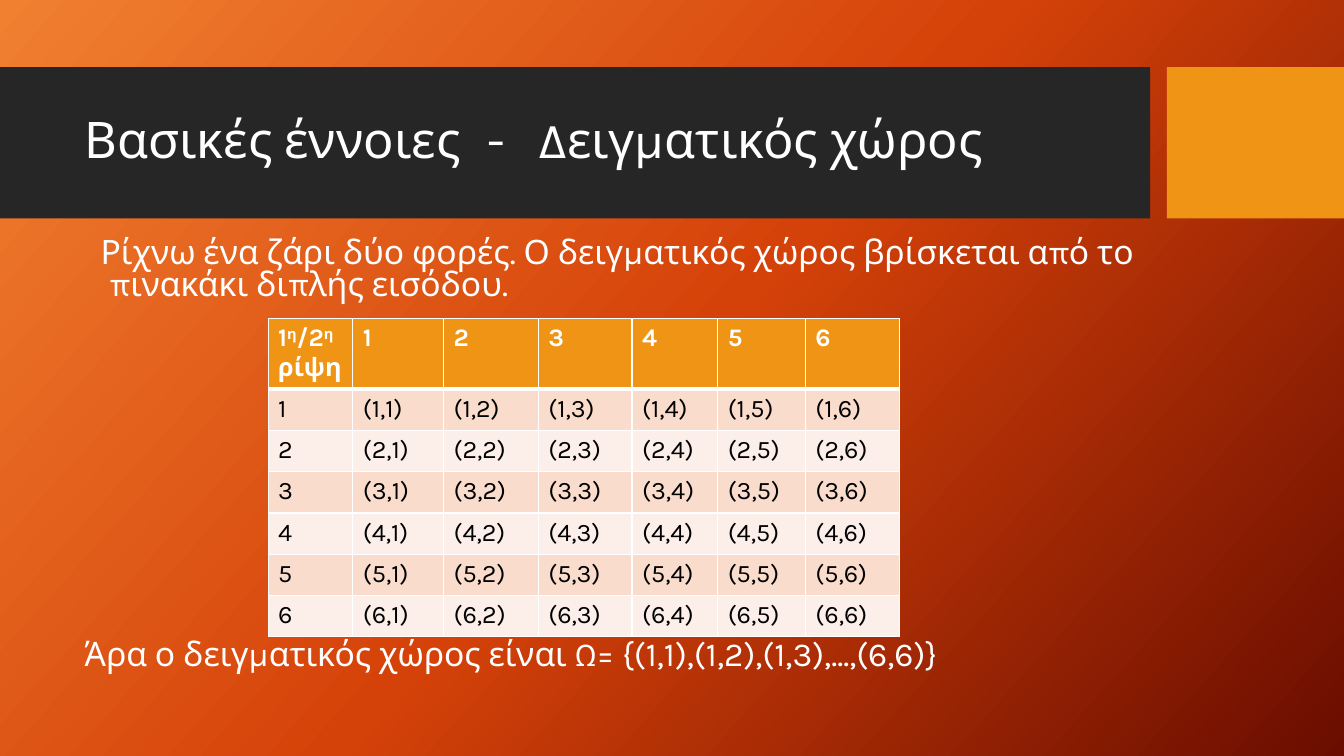
from copy import deepcopy

from lxml import etree
from pptx import Presentation
from pptx.dml.color import RGBColor
from pptx.enum.shapes import MSO_SHAPE
from pptx.enum.text import MSO_ANCHOR
from pptx.oxml.ns import qn
from pptx.util import Pt

RECTANGLE = MSO_SHAPE.RECTANGLE
MIDDLE = MSO_ANCHOR.MIDDLE
FONT = "Karla"
COLORS = {
    "white": "FFFFFF",
    "black": "000000",
    "band": "262626",
    "accent": "F09415",
    "odd_row": "F9DCCC",
    "even_row": "FCEEE8",
}
BACKGROUND_STOPS = [(0, "F18031"), (0.5, "D54209"), (1, "6A0D00")]
COLUMN_WIDTHS = [60.5, 64.8, 67.7, 67, 61.2, 62.6, 67]
HEADER_HEIGHT = 48.5
ROW_HEIGHT = 29.5
FACES = range(1, 7)


def rgb(name):
    return RGBColor.from_string(COLORS[name])


def style(paragraph, size, color="white", bold=False):
    font = paragraph.font
    font.name = FONT
    font.size = Pt(size)
    font.bold = bold
    font.color.rgb = rgb(color)


def paint_background(slide):
    fill = slide.background.fill
    fill.gradient()
    fill.gradient_angle = 360 - 42
    stop_list = slide.element.find(".//" + qn("a:gsLst"))
    stop_list.append(deepcopy(stop_list[-1]))
    for stop, (position, color) in zip(fill.gradient_stops, BACKGROUND_STOPS):
        stop.position = position
        stop.color.rgb = RGBColor.from_string(color)


def add_block(slide, left, top, width, height, color):
    shape = slide.shapes.add_shape(RECTANGLE, Pt(left), Pt(top), Pt(width), Pt(height))
    shape.shadow.inherit = False
    shape.fill.solid()
    shape.fill.fore_color.rgb = rgb(color)
    shape.line.fill.background()


def add_text(slide, left, top, width, height, text, size, spacing,
             indent=(0, 0), tabs=(), anchor=None):
    box = slide.shapes.add_textbox(Pt(left), Pt(top), Pt(width), Pt(height))
    frame = box.text_frame
    frame.word_wrap = True
    frame.vertical_anchor = anchor
    paragraph = frame.paragraphs[0]
    paragraph.text = text
    properties = paragraph._p.get_or_add_pPr()
    margin, first_line = indent
    properties.set("marL", str(Pt(margin)))
    properties.set("indent", str(Pt(first_line)))
    if tabs:
        tab_list = etree.SubElement(properties, qn("a:tabLst"))
        for position in tabs:
            etree.SubElement(tab_list, qn("a:tab"), pos=str(Pt(position)), algn="l")
    paragraph.line_spacing = spacing
    style(paragraph, size)


def add_header(slide, left, top, width, height):
    band_width = 821.5
    gap = 12
    add_block(slide, left, top, band_width, height, "band")
    add_block(slide, left + band_width + gap, top,
              width - band_width - gap, height, "accent")
    add_text(slide, left + 53.3, top + 10.8, 756.7, 85,
             "Βασικές έννοιες\t-\tΔειγματικός χώρος", 36, 0.9,
             tabs=(311, 367), anchor=MIDDLE)


def set_borders(cell, bottom):
    properties = cell._tc.get_or_add_tcPr()
    widths = {"a:lnL": 1, "a:lnR": 1, "a:lnT": 1, "a:lnB": bottom}
    for index, (tag, width) in enumerate(widths.items()):
        line = etree.Element(qn(tag), w=str(Pt(width)))
        fill = etree.SubElement(line, qn("a:solidFill"))
        etree.SubElement(fill, qn("a:srgbClr"), val=COLORS["white"])
        properties.insert(index, line)


def fill_cell(cell, runs, fill, color, bold=False, bottom=1):
    cell.fill.solid()
    cell.fill.fore_color.rgb = rgb(fill)
    paragraph = cell.text_frame.paragraphs[0]
    for text, raised in runs:
        run = paragraph.add_run()
        run.text = text
        if raised:
            run._r.get_or_add_rPr().set("baseline", "30000")
    style(paragraph, 18, color, bold)
    set_borders(cell, bottom)


def add_outcome_table(slide, left, top):
    size = len(FACES) + 1
    height = HEADER_HEIGHT + ROW_HEIGHT * len(FACES)
    table = slide.shapes.add_table(size, size, Pt(left), Pt(top),
                                   Pt(sum(COLUMN_WIDTHS)), Pt(height)).table
    for column, width in zip(table.columns, COLUMN_WIDTHS):
        column.width = Pt(width)
    for index, row in enumerate(table.rows):
        row.height = Pt(ROW_HEIGHT if index else HEADER_HEIGHT)

    corner = [("1", False), ("η", True), ("/2", False), ("η", True), (" ρίψη", False)]
    headings = [corner] + [[(str(face), False)] for face in FACES]
    for column, runs in enumerate(headings):
        fill_cell(table.cell(0, column), runs, "accent", "white", True, 3)
    for first in FACES:
        fill = "odd_row" if first % 2 else "even_row"
        labels = [str(first)] + [f"({first},{second})" for second in FACES]
        for column, label in enumerate(labels):
            fill_cell(table.cell(first, column), [(label, False)], fill, "black")


def add_body(slide, left, top, width):
    add_text(slide, left, top, width, 62,
             "Ρίχνω ένα ζάρι δύο φορές. Ο δειγματικός χώρος βρίσκεται από το "
             "πινακάκι διπλής εισόδου.", 24, 0.8, indent=(18, -6.5))
    add_outcome_table(slide, left + 138.2, top + 60.5)
    add_text(slide, left, top + 287, width, 36,
             "Άρα ο δειγματικός χώρος είναι Ω= {(1,1),(1,2),(1,3),...,(6,6)}",
             24, 0.8, indent=(18, -18))


def main():
    presentation = Presentation()
    presentation.slide_width = Pt(960)
    presentation.slide_height = Pt(540)
    slide = presentation.slides.add_slide(presentation.slide_layouts[6])
    paint_background(slide)
    add_header(slide, 0, 48, 960, 108)
    add_body(slide, 53.3, 167, 766)
    presentation.save("out.pptx")


if __name__ == "__main__":
    main()
